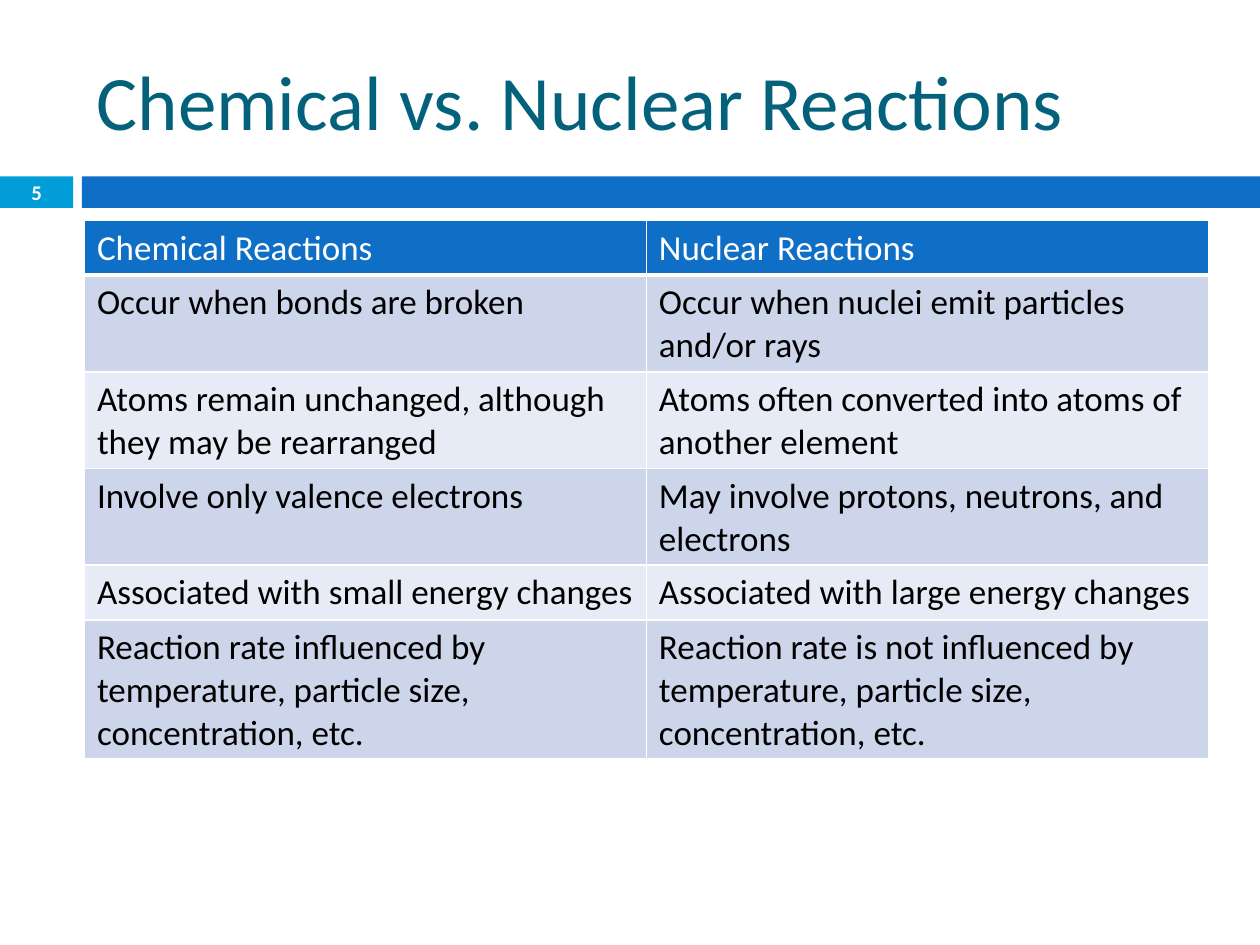
import dataclasses

import pptx
import pptx.dml.color
import pptx.enum.shapes
import pptx.enum.text
import pptx.oxml
import pptx.oxml.ns
import pptx.util

Inches = pptx.util.Inches
Align = pptx.enum.text.PP_ALIGN
Anchor = pptx.enum.text.MSO_ANCHOR


@dataclasses.dataclass(frozen=True)
class Theme:
    font: str = "Calibri"
    title_color: str = "04617B"
    accent: str = "0F6FC6"
    accent_light: str = "009DD9"
    band_dark: str = "CCD5EA"
    band_light: str = "E7EBF5"
    white: str = "FFFFFF"
    black: str = "000000"
    title_size: float = 44
    table_size: float = 20
    number_size: float = 11.9
    border_width: float = 1
    header_border_width: float = 3


def rgb(color):
    return pptx.dml.color.RGBColor.from_string(color)


class SlideBuilder:
    def __init__(self, slide, theme):
        self.slide = slide
        self.theme = theme

    def style_text(self, text_frame, size, color, bold=False, align=Align.LEFT):
        for paragraph in text_frame.paragraphs:
            paragraph.alignment = align
            for run in paragraph.runs:
                run.font.name = self.theme.font
                run.font.size = pptx.util.Pt(size)
                run.font.bold = bold
                run.font.color.rgb = rgb(color)

    def bar(self, left, top, width, height, color):
        shape = self.slide.shapes.add_shape(
            pptx.enum.shapes.MSO_SHAPE.RECTANGLE,
            Inches(left), Inches(top), Inches(width), Inches(height))
        shape.shadow.inherit = False
        shape.fill.solid()
        shape.fill.fore_color.rgb = rgb(color)
        shape.line.fill.background()

    def text(self, left, top, width, height, text, size, color, **style):
        box = self.slide.shapes.add_textbox(
            Inches(left), Inches(top), Inches(width), Inches(height))
        text_frame = box.text_frame
        text_frame.word_wrap = True
        text_frame.vertical_anchor = Anchor.MIDDLE
        text_frame.text = text
        self.style_text(text_frame, size, color, **style)

    def cell_borders(self, cell, bottom_width):
        properties = cell._tc.get_or_add_tcPr()
        normal = self.theme.border_width
        widths = {"lnL": normal, "lnR": normal, "lnT": normal, "lnB": bottom_width}
        for side, width in widths.items():
            properties.append(pptx.oxml.parse_xml(
                f'<a:{side} {pptx.oxml.ns.nsdecls("a")} w="{pptx.util.Pt(width)}">'
                f'<a:solidFill><a:srgbClr val="{self.theme.white}"/></a:solidFill>'
                f'</a:{side}>'))

    def table(self, left, top, width, row_height, rows):
        theme = self.theme
        table = self.slide.shapes.add_table(
            len(rows), len(rows[0]), Inches(left), Inches(top),
            Inches(width), Inches(row_height * len(rows))).table
        for row_index, row in enumerate(rows):
            if row_index == 0:
                fill, color = theme.accent, theme.white
                bottom_width = theme.header_border_width
            else:
                fill = theme.band_dark if row_index % 2 else theme.band_light
                color, bottom_width = theme.black, theme.border_width
            for column_index, text in enumerate(row):
                cell = table.cell(row_index, column_index)
                cell.text_frame.text = text
                self.style_text(cell.text_frame, theme.table_size, color)
                # Borders come before the fill in the cell properties
                self.cell_borders(cell, bottom_width)
                cell.fill.solid()
                cell.fill.fore_color.rgb = rgb(fill)


REACTIONS = [
    ("Chemical Reactions", "Nuclear Reactions"),
    ("Occur when bonds are broken",
     "Occur when nuclei emit particles and/or rays"),
    ("Atoms remain unchanged, although they may be rearranged",
     "Atoms often converted into atoms of another element"),
    ("Involve only valence electrons",
     "May involve protons, neutrons, and electrons"),
    ("Associated with small energy changes",
     "Associated with large energy changes"),
    ("Reaction rate influenced by temperature, particle size, concentration, etc.",
     "Reaction rate is not influenced by temperature, particle size, "
     "concentration, etc."),
]


def main():
    presentation = pptx.Presentation()
    presentation.slide_width = Inches(10)
    presentation.slide_height = Inches(7.5)
    theme = Theme()
    slide = presentation.slides.add_slide(presentation.slide_layouts[6])
    builder = SlideBuilder(slide, theme)

    # Divider bars
    builder.bar(0, 1.4, 0.58, 0.25, theme.accent_light)
    builder.bar(0.65, 1.4, 9.35, 0.25, theme.accent)

    # Title
    builder.text(0.67, 0.25, 8.92, 1.08, "Chemical vs. Nuclear Reactions",
                 theme.title_size, theme.title_color)

    # Comparison table
    builder.table(0.67, 1.75, 8.92, 0.41, REACTIONS)

    # Slide number
    builder.text(0, 1.39, 0.58, 0.27, "5", theme.number_size, theme.white,
                 bold=True, align=Align.CENTER)

    presentation.save("out.pptx")


if __name__ == "__main__":
    main()
